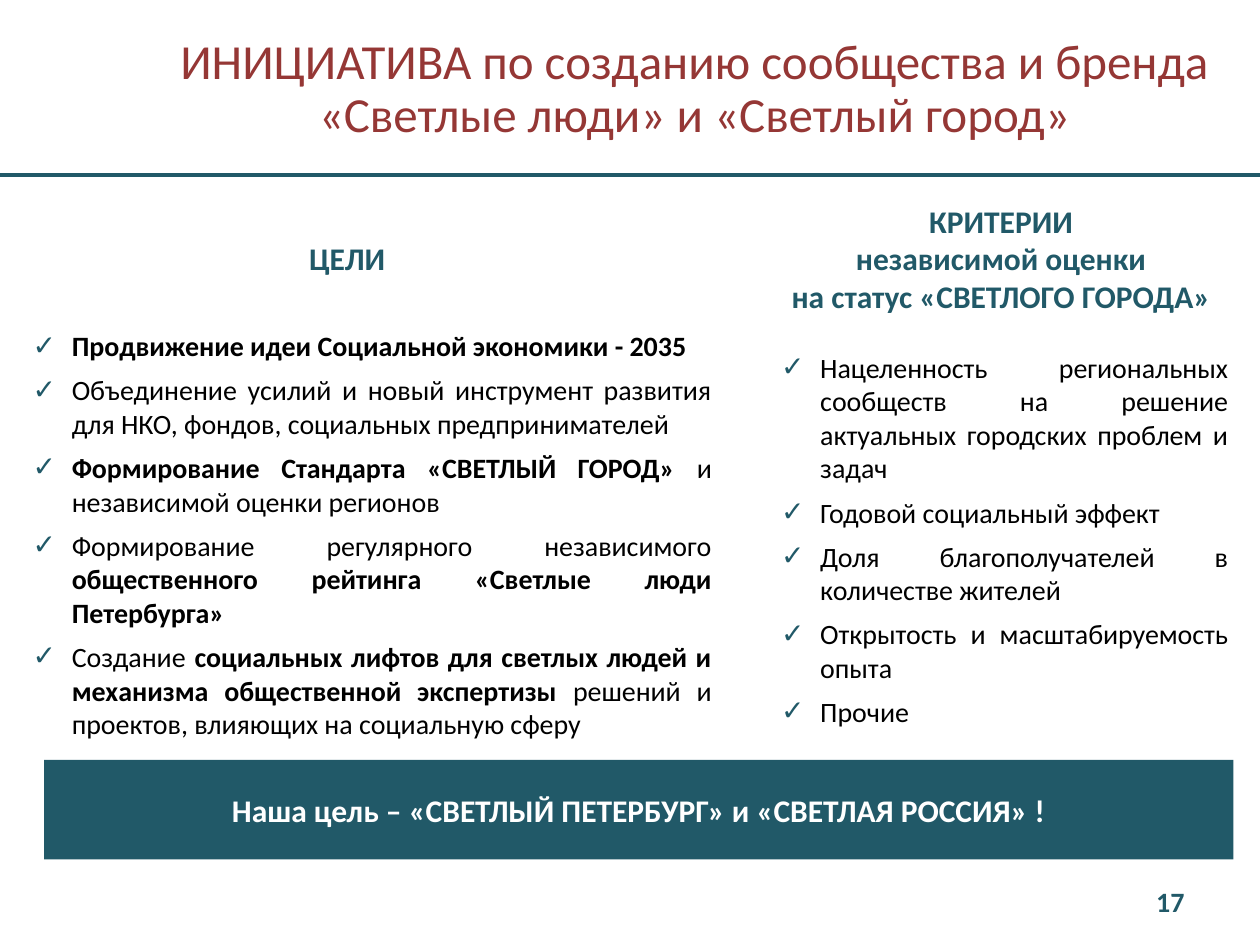
from dataclasses import dataclass
from typing import Any

from lxml import etree
from pptx import Presentation
from pptx.dml.color import RGBColor
from pptx.enum.shapes import MSO_CONNECTOR, MSO_SHAPE
from pptx.enum.text import MSO_ANCHOR, MSO_AUTO_SIZE, PP_ALIGN
from pptx.oxml.ns import qn
from pptx.util import Inches, Pt

CENTER, JUSTIFY, RIGHT = PP_ALIGN.CENTER, PP_ALIGN.JUSTIFY, PP_ALIGN.RIGHT
TOP, MIDDLE = MSO_ANCHOR.TOP, MSO_ANCHOR.MIDDLE
COLORS = {"teal": "215968", "red": "953735", "black": "000000", "white": "FFFFFF"}
COMPARISON_LAYOUT = 4
COLUMNS, ROWS = 100, 75
BOLD_MARK = "*"

presentation = Presentation()
presentation.slide_width, presentation.slide_height = Inches(10), Inches(7.5)
COLUMN = presentation.slide_width // COLUMNS
ROW = presentation.slide_height // ROWS


@dataclass(frozen=True)
class Box:
    column: float
    row: float
    columns: float
    rows: float

    def place(self) -> dict[str, int]:
        return {
            "left": round(self.column * COLUMN),
            "top": round(self.row * ROW),
            "width": round(self.columns * COLUMN),
            "height": round(self.rows * ROW),
        }


@dataclass(frozen=True)
class Style:
    size: int
    color: str
    bold: bool = False
    align: Any = CENTER
    anchor: Any = TOP
    line_spacing: float = 1.0
    space_after: int = 0
    bullet: str = ""


@dataclass(frozen=True)
class TextBlock:
    placeholder: int
    box: Box
    style: Style
    lines: tuple[str, ...]


TITLE = Style(28, "red", anchor=MIDDLE, line_spacing=0.9)
HEADING = Style(18, "teal", bold=True)
LIST = Style(16, "black", align=JUSTIFY, space_after=6, bullet="✓")
BANNER = Style(18, "white", bold=True, anchor=MIDDLE)
NUMBER = Style(16, "teal", bold=True, align=RIGHT, anchor=MIDDLE)

BLOCKS = (
    TextBlock(0, Box(12.2, 4.4, 85.8, 5.5), TITLE, (
        "ИНИЦИАТИВА по созданию сообщества и бренда «Светлые люди» и «Светлый город»",
    )),
    TextBlock(1, Box(7.5, 18.5, 40.1, 4), HEADING, ("ЦЕЛИ",)),
    TextBlock(2, Box(1.6, 25.6, 55.9, 25.4), LIST, (
        "*Продвижение идеи Социальной экономики - 2035*",
        "Объединение усилий и новый инструмент развития для НКО, фондов, "
        "социальных предпринимателей",
        "*Формирование Стандарта «СВЕТЛЫЙ ГОРОД» *и независимой оценки регионов",
        "Формирование регулярного независимого "
        "*общественного рейтинга «Светлые люди Петербурга»*",
        "Создание *социальных лифтов для светлых людей и механизма общественной "
        "экспертизы *решений и проектов, влияющих на социальную сферу",
    )),
    TextBlock(3, Box(60.9, 15.5, 37.1, 10.1), HEADING, (
        "КРИТЕРИИ", "независимой оценки", "на статус «СВЕТЛОГО ГОРОДА»",
    )),
    TextBlock(4, Box(61, 27.3, 37.5, 13.3), LIST, (
        "Нацеленность региональных сообществ на решение актуальных городских "
        "проблем и задач",
        "Годовой социальный эффект",
        "Доля благополучателей в количестве жителей",
        "Открытость и масштабируемость опыта",
        "Прочие",
    )),
)


def set_values(target: Any, values: dict[str, Any]) -> None:
    for name, value in values.items():
        setattr(target, name, value)


def color(name: str) -> RGBColor:
    return RGBColor.from_string(COLORS[name])


def add_bullet(paragraph: Any, character: str) -> None:
    properties = paragraph._p.get_or_add_pPr()
    indent = Inches(0.31)
    properties.set("marL", str(indent))
    properties.set("indent", str(-indent))
    bullet_color = etree.SubElement(properties, qn("a:buClr"))
    etree.SubElement(bullet_color, qn("a:srgbClr"), val=COLORS["teal"])
    etree.SubElement(properties, qn("a:buFont"), typeface="Calibri")
    etree.SubElement(properties, qn("a:buChar"), char=character)


def write_text(shape: Any, lines: tuple[str, ...], style: Style) -> None:
    frame = shape.text_frame
    set_values(frame, {
        "word_wrap": True,
        "auto_size": MSO_AUTO_SIZE.NONE,
        "vertical_anchor": style.anchor,
    })
    for index, line in enumerate(lines):
        paragraph = frame.add_paragraph() if index else frame.paragraphs[0]
        if style.bullet:
            add_bullet(paragraph, style.bullet)
        set_values(paragraph, {
            "alignment": style.align,
            "line_spacing": style.line_spacing,
            "space_before": Pt(0),
            "space_after": Pt(style.space_after),
        })
        for position, part in enumerate(line.split(BOLD_MARK)):
            if part:
                run = paragraph.add_run()
                run.text = part
                set_values(run.font, {
                    "name": "Calibri",
                    "size": Pt(style.size),
                    "bold": style.bold or position % 2 == 1,
                })
                run.font.color.rgb = color(style.color)


def add_rule(slide: Any, row: float) -> None:
    height = round(row * ROW)
    rule = slide.shapes.add_connector(
        MSO_CONNECTOR.STRAIGHT, 0, height, presentation.slide_width, height
    )
    rule.line.width = Pt(2.25)
    rule.line.color.rgb = color("teal")
    etree.SubElement(rule._element.spPr, qn("a:effectLst"))


def add_banner(slide: Any, box: Box, text: str) -> None:
    banner = slide.shapes.add_shape(MSO_SHAPE.RECTANGLE, **box.place())
    banner.shadow.inherit = False
    banner.fill.solid()
    banner.fill.fore_color.rgb = color("teal")
    banner.line.fill.background()
    write_text(banner, (text,), BANNER)


def main() -> None:
    slide = presentation.slides.add_slide(presentation.slide_layouts[COMPARISON_LAYOUT])
    add_rule(slide, 13.9)
    placeholders = {item.placeholder_format.idx: item for item in slide.placeholders}
    for block in BLOCKS:
        shape = placeholders[block.placeholder]
        set_values(shape, block.box.place())
        write_text(shape, block.lines, block.style)
    add_banner(
        slide,
        Box(3.5, 60.3, 94.4, 7.9),
        "Наша цель – «СВЕТЛЫЙ ПЕТЕРБУРГ» и «СВЕТЛАЯ РОССИЯ» !",
    )
    number = slide.shapes.add_textbox(**Box(71.7, 69.5, 23.3, 4).place())
    write_text(number, ("17",), NUMBER)
    presentation.save("out.pptx")


if __name__ == "__main__":
    main()
